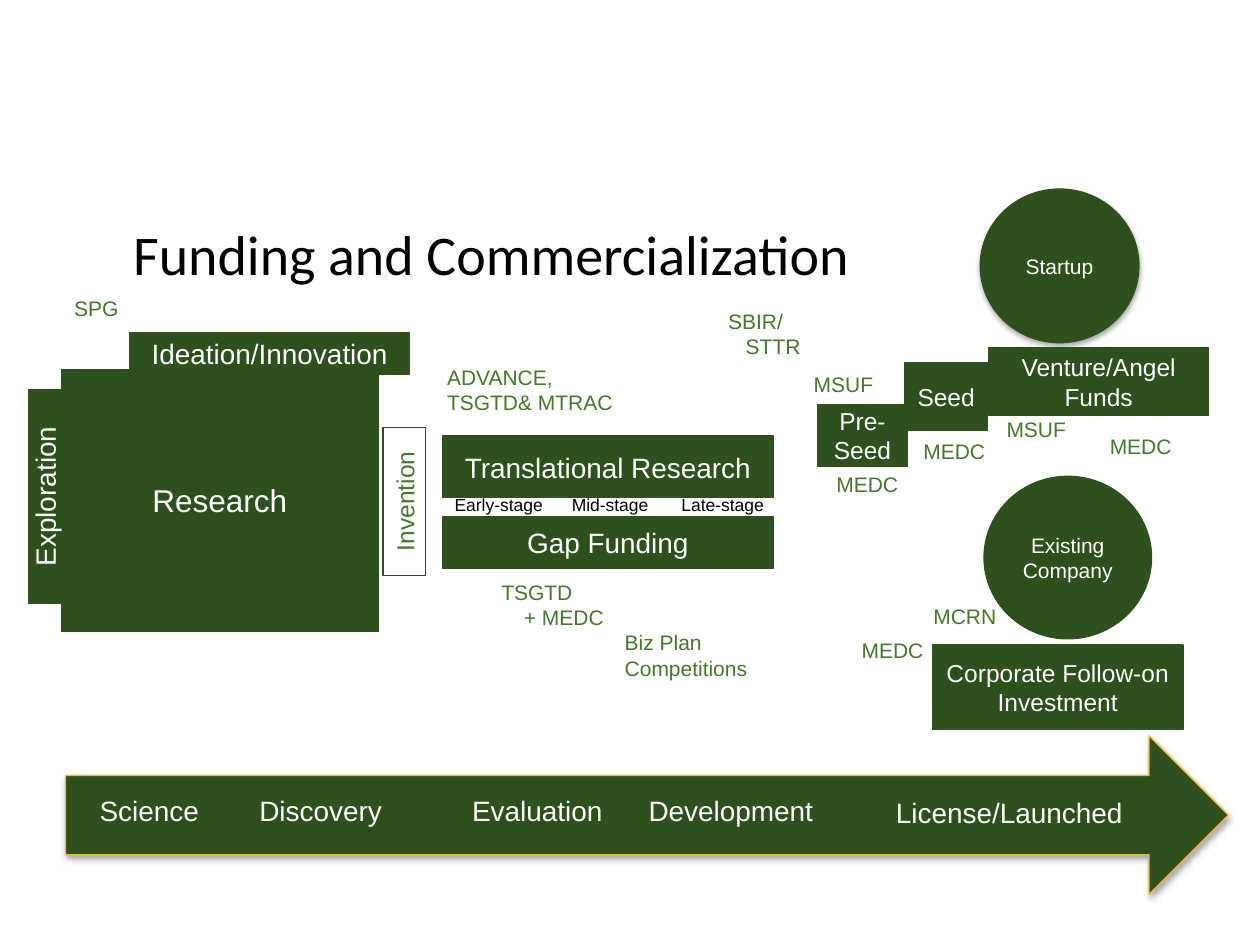
import pptx
import pptx.util
import pptx.dml.color
import pptx.enum.shapes
import pptx.enum.text
from lxml import etree
from pptx.oxml.ns import qn

Inches, Pt = pptx.util.Inches, pptx.util.Pt
SHAPE = pptx.enum.shapes.MSO_SHAPE
ALIGN = pptx.enum.text.PP_ALIGN
ANCHOR = pptx.enum.text.MSO_ANCHOR

DARK, GREEN, GOLD, WHITE, BLACK = "2E501C", "45782A", "F1B83D", "FFFFFF", "000000"

# Content: text, (left, top, width, height), size
TITLE = ("Funding and Commercialization", (-0.6, 1.69, 9, 1.25), 32)
ARROW = (0.52, 5.84, 9.23, 1.26)
PHASES = [
    ("License/Launched", (6.99, 6.17, 2.04, 0.59)),
    ("Development", (5.07, 6.13, 1.46, 0.63)),
    ("Evaluation", (3.65, 6.13, 1.23, 0.63)),
    ("Discovery", (1.93, 6.13, 1.23, 0.63)),
    ("Science", (0.57, 6.13, 1.23, 0.63)),
]
OUTCOMES = [
    ("Existing Company", (7.81, 3.78, 1.33, 1.29), False),
    ("Startup", (7.78, 1.5, 1.26, 1.22), True),
]
BLOCKS = [
    ("Corporate Follow-on Investment", (7.4, 5.12, 1.99, 0.67), 14),
    ("Research", (0.49, 2.93, 2.51, 2.08), 18),
    ("Translational Research", (3.51, 3.46, 2.63, 0.49), 16),
    ("Gap Funding", (3.51, 4.1, 2.63, 0.41), 16),
    ("Venture/Angel Funds", (7.85, 2.76, 1.74, 0.54), 14),
    ("Seed", (7.18, 2.88, 0.66, 0.54), 14),
    ("Pre-Seed", (6.49, 3.21, 0.71, 0.49), 14),
    ("Ideation/Innovation", (1.03, 2.64, 2.22, 0.33), 16),
]
EXPLORATION = ("Exploration", (-0.49, 3.81, 1.69, 0.26), 16)
INVENTION = ("Invention", (2.62, 3.81, 1.18, 0.34), 14)
# Funding sources: text, box, indent of the second line
SOURCES = [
    ("SPG", (0.49, 2.3, 0.98, 0.3), 0),
    ("ADVANCE, TSGTD& MTRAC", (3.45, 2.84, 1.63, 0.71), 0),
    ("SBIR/\nSTTR", (5.68, 2.4, 0.98, 0.5), 0.14),
    ("MEDC", (7.23, 3.43, 0.81, 0.3), 0),
    ("TSGTD\n+ MEDC", (3.88, 4.55, 1.28, 0.5), 0.18),
    ("Biz Plan\nCompetitions", (4.86, 4.95, 1.28, 0.5), 0),
    ("MEDC", (6.54, 3.69, 0.87, 0.3), 0),
    ("MCRN", (7.31, 4.74, 0.87, 0.3), 0),
    ("MEDC", (8.71, 3.39, 0.87, 0.3), 0),
    ("MSUF", (7.89, 3.26, 0.83, 0.3), 0),
    ("MEDC", (6.74, 5.01, 0.87, 0.3), 0),
    ("MSUF", (6.36, 2.9, 0.83, 0.3), 0),
]
STAGES = ("Early-stage\tMid-stage\tLate-stage", (3.51, 3.87, 2.73, 0.27), 10)
STAGE_TABS = (0.93, 1.8)


def rgb(value):
    return pptx.dml.color.RGBColor.from_string(value)


def lengths(box):
    return [Inches(n) for n in box]


def write(holder, text, size, color, align=ALIGN.CENTER, anchor=ANCHOR.MIDDLE, font="Arial"):
    frame = holder.text_frame
    frame.text = text
    frame.word_wrap = True
    frame.vertical_anchor = anchor
    for paragraph in frame.paragraphs:
        paragraph.alignment = align
        for run in paragraph.runs:
            run.font.size, run.font.name = Pt(size), font
            run.font.color.rgb = rgb(color)
    return frame


def add_block(parent, preset, box, fill=DARK, line=DARK, shadow=False):
    block = parent.add_shape(preset, *lengths(box))
    if fill:
        block.fill.solid()
        block.fill.fore_color.rgb = rgb(fill)
    else:
        block.fill.background()
    block.line.color.rgb = rgb(line)
    block.line.width = Pt(0.75)
    block.shadow.inherit = False
    if shadow:
        effects = block._element.spPr.find(qn("a:effectLst"))
        outer = etree.SubElement(effects, qn("a:outerShdw"), blurRad=str(Pt(3.1)),
                                 dist=str(Pt(1.8)), dir="5400000", rotWithShape="0")
        tint = etree.SubElement(outer, qn("a:srgbClr"), val=BLACK)
        etree.SubElement(tint, qn("a:alpha"), val="35000")
    return block


def add_label(parent, text, box, size, color):
    label = parent.add_textbox(*lengths(box))
    return write(label, text, size, color, ALIGN.LEFT, ANCHOR.TOP)


prs = pptx.Presentation()
prs.slide_width, prs.slide_height = Inches(10), Inches(7.5)
slide = prs.slides.add_slide(prs.slide_layouts[5])
shapes = slide.shapes

# Title
text, box, size = TITLE
title = shapes.title
title.left, title.top, title.width, title.height = lengths(box)
write(title, text, size, BLACK, anchor=ANCHOR.TOP, font="Calibri")

# Timeline arrow with its phases
timeline = shapes.add_group_shape().shapes
add_block(timeline, SHAPE.RIGHT_ARROW, ARROW, line=GOLD, shadow=True)
for text, box in PHASES:
    frame = write(timeline.add_textbox(*lengths(box)), text, 16, WHITE)
    frame.margin_left = frame.margin_right = 0
    frame.margin_top = frame.margin_bottom = Inches(0.18)
    frame.paragraphs[0].line_spacing = 0.9

# Outcomes and funding blocks
for text, box, shadow in OUTCOMES:
    write(add_block(shapes, SHAPE.OVAL, box, shadow=shadow), text, 12, WHITE)
for text, box, size in BLOCKS:
    write(add_block(shapes, SHAPE.RECTANGLE, box), text, size, WHITE)

# Vertical blocks
for (text, box, size), fill, color in ((EXPLORATION, DARK, WHITE), (INVENTION, None, GREEN)):
    upright = add_block(shapes, SHAPE.RECTANGLE, box, fill=fill)
    upright.rotation = 270
    write(upright, text, size, color)

# Funding sources
for text, box, indent in SOURCES:
    frame = add_label(shapes, text, box, 12, GREEN)
    if indent:
        frame.paragraphs[1]._p.get_or_add_pPr().set("marL", str(Inches(indent)))

# Stages between translational research and gap funding
text, box, size = STAGES
stages = add_label(shapes, text, box, size, BLACK)
tabs = etree.SubElement(stages.paragraphs[0]._p.get_or_add_pPr(), qn("a:tabLst"))
for stop in STAGE_TABS:
    etree.SubElement(tabs, qn("a:tab"), pos=str(Inches(stop)), algn="l")

prs.save("out.pptx")
